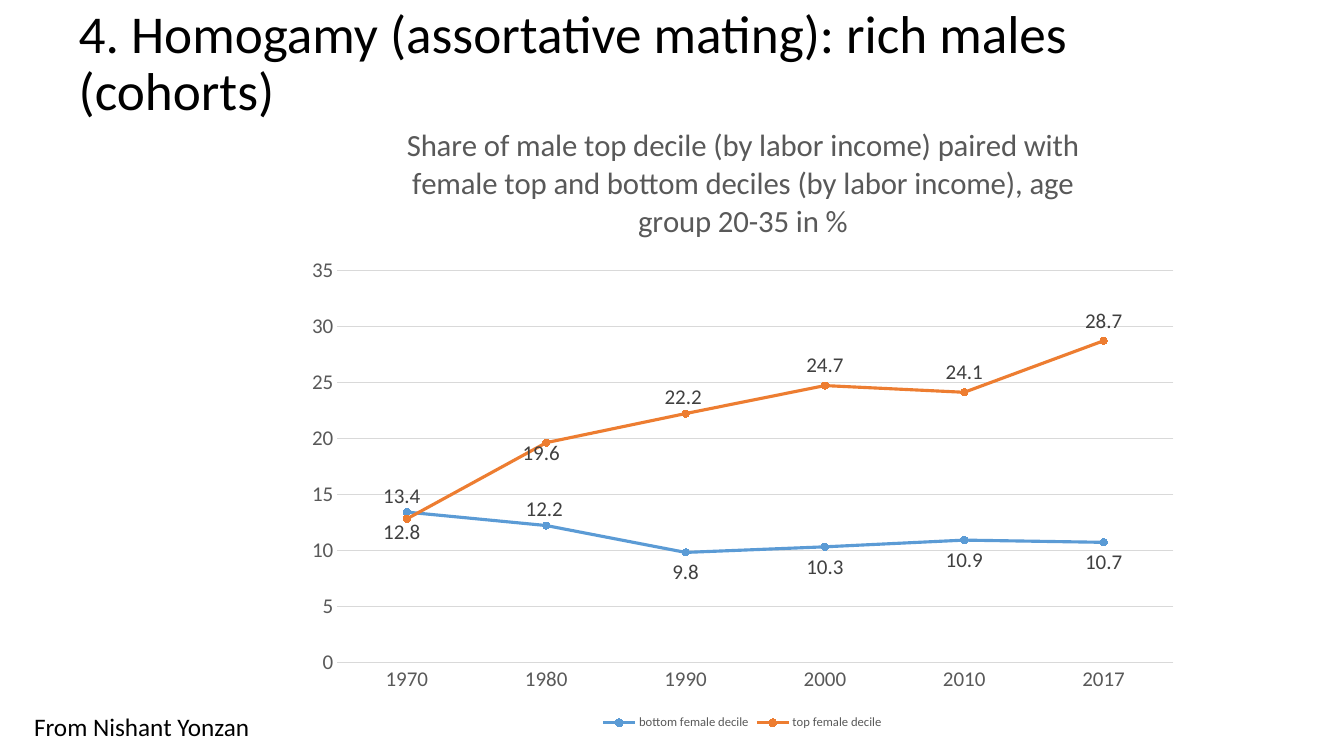
from lxml import etree
from pptx import Presentation
from pptx.chart.data import CategoryChartData
from pptx.dml.color import RGBColor
from pptx.enum.chart import XL_CHART_TYPE as ChartType
from pptx.enum.chart import XL_LABEL_POSITION as LabelPos
from pptx.enum.chart import XL_LEGEND_POSITION as LegendPos
from pptx.enum.chart import XL_MARKER_STYLE as Marker
from pptx.enum.chart import XL_TICK_MARK as Tick
from pptx.enum.text import MSO_ANCHOR as Anchor
from pptx.enum.text import MSO_AUTO_SIZE as AutoSize
from pptx.enum.text import PP_ALIGN as Align
from pptx.oxml.ns import qn
from pptx.util import Cm, Pt

THEME = {
    "font": "Calibri",
    "grid": RGBColor.from_string("D9D9D9"),
    "bottom": RGBColor.from_string("5B9BD5"),
    "top": RGBColor.from_string("ED7D31"),
    "heading": (38, "000000"),
    "credit": (18, "000000"),
    "chart": (10, "000000"),
    "caption": (22, "595959"),
    "axis": (15, "595959"),
    "legend": (9, "595959"),
    "label": (15, "404040"),
}
CHART_WIDTH, CHART_HEIGHT = Cm(22.58), Cm(15.88)


def style_font(font, role):
    size, color = THEME[role]
    for attribute, value in {"name": THEME["font"], "size": Pt(size), "bold": False}.items():
        setattr(font, attribute, value)
    font.color.rgb = RGBColor.from_string(color)


def add_layout(parent, position, modes, lengths):
    for old_layout in parent.findall(qn("c:layout")):
        parent.remove(old_layout)
    layout = etree.Element(qn("c:layout"))
    manual = etree.SubElement(layout, qn("c:manualLayout"))
    extents = {"x": CHART_WIDTH, "y": CHART_HEIGHT, "w": CHART_WIDTH, "h": CHART_HEIGHT}
    fractions = {tag: length / extents[tag] for tag, length in lengths.items()}
    for tag, value in {**modes, **fractions}.items():
        etree.SubElement(manual, qn(f"c:{tag}")).set("val", str(value))
    parent.insert(position, layout)


prs = Presentation()
prs.slide_width, prs.slide_height = Cm(33.87), Cm(19.05)
slide = prs.slides.add_slide(prs.slide_layouts[5])

heading = slide.shapes.title
heading_box = {"left": Cm(1.73), "top": Cm(0.71), "width": Cm(30.38), "height": Cm(1.85)}
for attribute, value in heading_box.items():
    setattr(heading, attribute, value)
credit = slide.shapes.add_textbox(Cm(0.61), Cm(17.81), Cm(11.53), Cm(1.02))

texts = [
    (heading, "heading", "4. Homogamy (assortative mating): rich males (cohorts)",
     {"vertical_anchor": Anchor.MIDDLE, "auto_size": AutoSize.NONE}, 0.9),
    (credit, "credit", "From Nishant Yonzan",
     {"auto_size": AutoSize.SHAPE_TO_FIT_TEXT}, 1.0),
]
for box, role, words, frame_format, spacing in texts:
    frame = box.text_frame
    for attribute, value in {"word_wrap": True, **frame_format}.items():
        setattr(frame, attribute, value)
    line = frame.paragraphs[0]
    line.text = words
    line.alignment = Align.LEFT
    line.line_spacing = spacing
    style_font(line.runs[0].font, role)

shares = CategoryChartData()
shares.categories = ["1970", "1980", "1990", "2000", "2010", "2017"]
shares.add_series("bottom female decile", [13.4, 12.2, 9.8, 10.3, 10.9, 10.7])
shares.add_series("top female decile", [12.8, 19.6, 22.2, 24.7, 24.1, 28.7])
chart = slide.shapes.add_chart(
    ChartType.LINE_MARKERS, Cm(7.42), Cm(2.62), CHART_WIDTH, CHART_HEIGHT, shares
).chart
style_font(chart.font, "chart")

chart.has_title = True
caption = chart.chart_title.text_frame.paragraphs[0]
caption.text = (
    "Share of male top decile (by labor income) paired with female top "
    "and bottom deciles (by labor income), age group 20-35 in %"
)
style_font(caption.runs[0].font, "caption")
chart.chart_title.include_in_layout = False

chart.has_legend = True
chart.legend.position = LegendPos.BOTTOM
chart.legend.include_in_layout = False
style_font(chart.legend.font, "legend")

years, percent = chart.category_axis, chart.value_axis
for axis in (years, percent):
    axis.major_tick_mark = axis.minor_tick_mark = Tick.NONE
    style_font(axis.tick_labels.font, "axis")
for attribute, value in {"minimum_scale": 0, "maximum_scale": 35, "major_unit": 5}.items():
    setattr(percent, attribute, value)
percent.tick_labels.number_format = "0"
percent.tick_labels.number_format_is_linked = False
percent.format.line.fill.background()
for rule in (years.format.line, percent.major_gridlines.format.line):
    rule.width = Pt(0.75)
    rule.color.rgb = THEME["grid"]

plot = chart.plots[0]
plot.vary_by_categories = False
deciles = [
    ("bottom", LabelPos.BELOW, [
        (LabelPos.ABOVE, Cm(-0.13), Cm(0.1)),
        (LabelPos.ABOVE, Cm(-0.05), Cm(0.08)),
    ]),
    ("top", LabelPos.ABOVE, [
        (LabelPos.BELOW, Cm(-0.13), Cm(-0.18)),
        (LabelPos.BELOW, Cm(-0.13), Cm(-0.23)),
        (LabelPos.ABOVE, Cm(-0.06), Cm(0.1)),
    ]),
]
series_nodes = chart.element.findall(f".//{qn('c:ser')}")
for decile, series_node, (role, side, early_labels) in zip(plot.series, series_nodes, deciles):
    decile.smooth = False
    decile.format.line.width = Pt(2.25)
    decile.marker.style = Marker.CIRCLE
    decile.marker.size = 5
    decile.marker.format.fill.solid()
    for ink in (decile.format.line.color, decile.marker.format.line.color,
                decile.marker.format.fill.fore_color):
        ink.rgb = THEME[role]
    decile.data_labels.show_value = True
    decile.data_labels.position = side
    style_font(decile.data_labels.font, "label")
    for year_index, (early_side, shift_x, shift_y) in enumerate(early_labels):
        label = decile.points[year_index].data_label
        style_font(label.font, "label")
        label.position = early_side
        label_node = series_node.findall(f".//{qn('c:dLbl')}")[year_index]
        add_layout(label_node, 1, {}, {"x": shift_x, "y": shift_y})

from_edge = {"xMode": "edge", "yMode": "edge"}
plot_area = chart.element.find(f".//{qn('c:plotArea')}")
add_layout(plot_area, 0, {"layoutTarget": "inner", **from_edge},
           {"x": Cm(1.08), "y": Cm(4.19), "w": Cm(21.07), "h": Cm(9.88)})
caption_node = chart.element.find(f".//{qn('c:title')}")
add_layout(caption_node, 1, from_edge, {"x": Cm(2.69), "y": Cm(0.35)})

prs.save("out.pptx")
